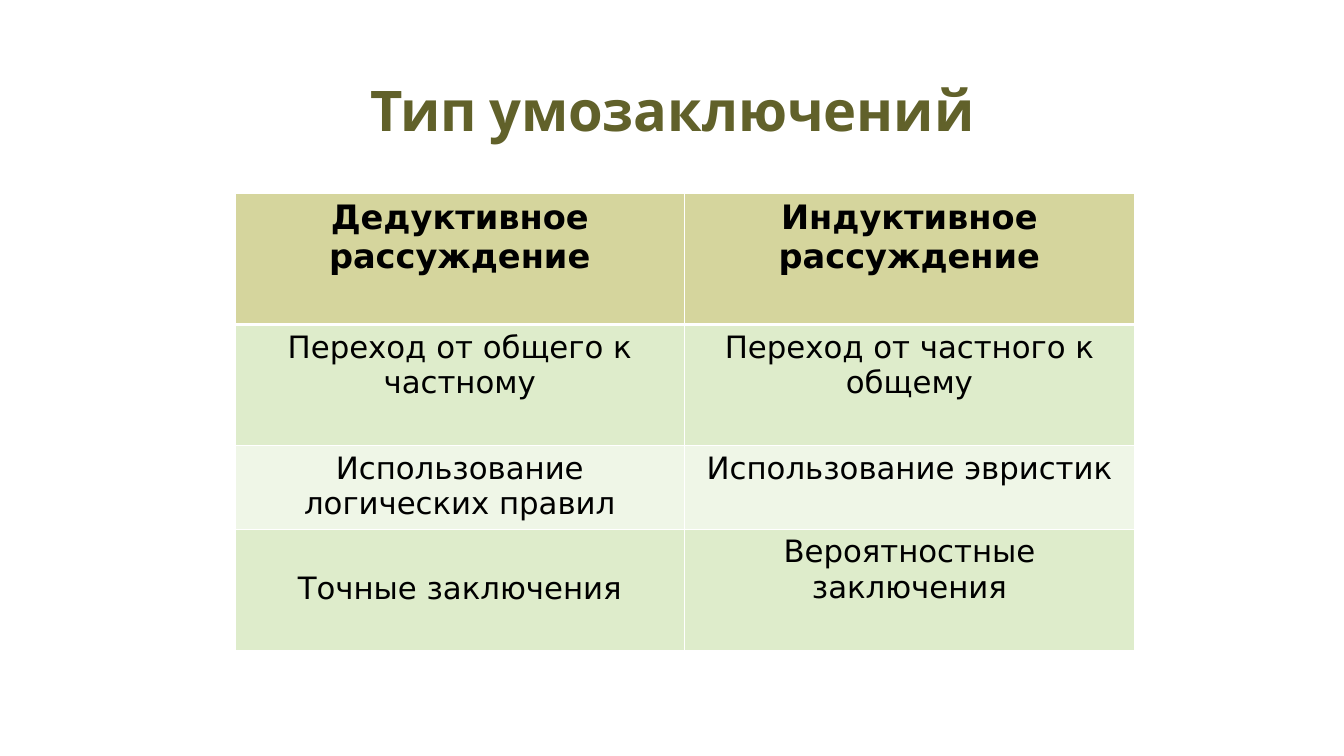
from lxml import etree
from pptx import Presentation
from pptx.dml.color import RGBColor
from pptx.enum.text import MSO_ANCHOR, PP_ALIGN
from pptx.oxml.ns import qn
from pptx.util import Inches, Pt

TITLE = "Тип умозаключений"
ROWS = [
    ("Дедуктивное рассуждение", "Индуктивное рассуждение"),
    ("Переход от общего к частному", "Переход от частного к общему"),
    ("Использование логических правил", "Использование эвристик"),
    ("Точные заключения", "Вероятностные заключения"),
]
ROW_HEIGHTS = [1.3, 1.2, 0.83, 1.2]
COL_WIDTH = 4.46
TOP_MARGINS = {(3, 0): 0.41}

OLIVE = RGBColor(0x61, 0x61, 0x2A)
BLACK = RGBColor(0, 0, 0)
WHITE = RGBColor(0xFF, 0xFF, 0xFF)
HEADER = RGBColor(0xD5, 0xD5, 0x9D)
BANDS = [RGBColor(0xEF, 0xF6, 0xE7), RGBColor(0xDE, 0xEC, 0xCB)]


def add_text(p, content, font, size, color, bold):
    p.alignment = PP_ALIGN.CENTER
    r = p.add_run()
    r.text = content
    r.font.name = font
    r.font.size = Pt(size)
    r.font.bold = bold
    r.font.color.rgb = color


def set_borders(cell, widths):
    tcPr = cell._tc.get_or_add_tcPr()
    for i, (side, width) in enumerate(widths.items()):
        ln = etree.Element(qn(f"a:ln{side}"), w=str(Pt(width)))
        fill = etree.SubElement(ln, qn("a:solidFill"))
        etree.SubElement(fill, qn("a:srgbClr"), val=str(WHITE))
        tcPr.insert(i, ln)


prs = Presentation()
prs.slide_width, prs.slide_height = Inches(13.33), Inches(7.5)
s = prs.slides.add_slide(prs.slide_layouts[5])

title = s.shapes.title
title.left, title.top = Inches(0.92), Inches(0.4)
title.width, title.height = Inches(11.5), Inches(1.45)
tf = title.text_frame
tf.vertical_anchor = MSO_ANCHOR.MIDDLE
tf.paragraphs[0].line_spacing = 0.9
add_text(tf.paragraphs[0], TITLE, "Cabin", 40, OLIVE, True)

table = s.shapes.add_table(
    len(ROWS), 2, Inches(2.33), Inches(1.92),
    Inches(2 * COL_WIDTH), Inches(sum(ROW_HEIGHTS))).table
for column in table.columns:
    column.width = Inches(COL_WIDTH)

for i, row in enumerate(ROWS):
    table.rows[i].height = Inches(ROW_HEIGHTS[i])
    is_header = i == 0
    for j, content in enumerate(row):
        cell = table.cell(i, j)
        cell.margin_left = cell.margin_right = Inches(0.2)
        cell.margin_top = Inches(TOP_MARGINS.get((i, j), 0.05))
        cell.margin_bottom = Inches(0.05)
        cell.fill.solid()
        cell.fill.fore_color.rgb = HEADER if is_header else BANDS[i % 2]
        set_borders(cell, {"L": 1, "R": 1, "T": 3 if i == 1 else 1,
                           "B": 3 if is_header else 1})
        add_text(cell.text_frame.paragraphs[0], content, "DejaVu Sans",
                 24 if is_header else 22, BLACK, is_header)

prs.save("out.pptx")
